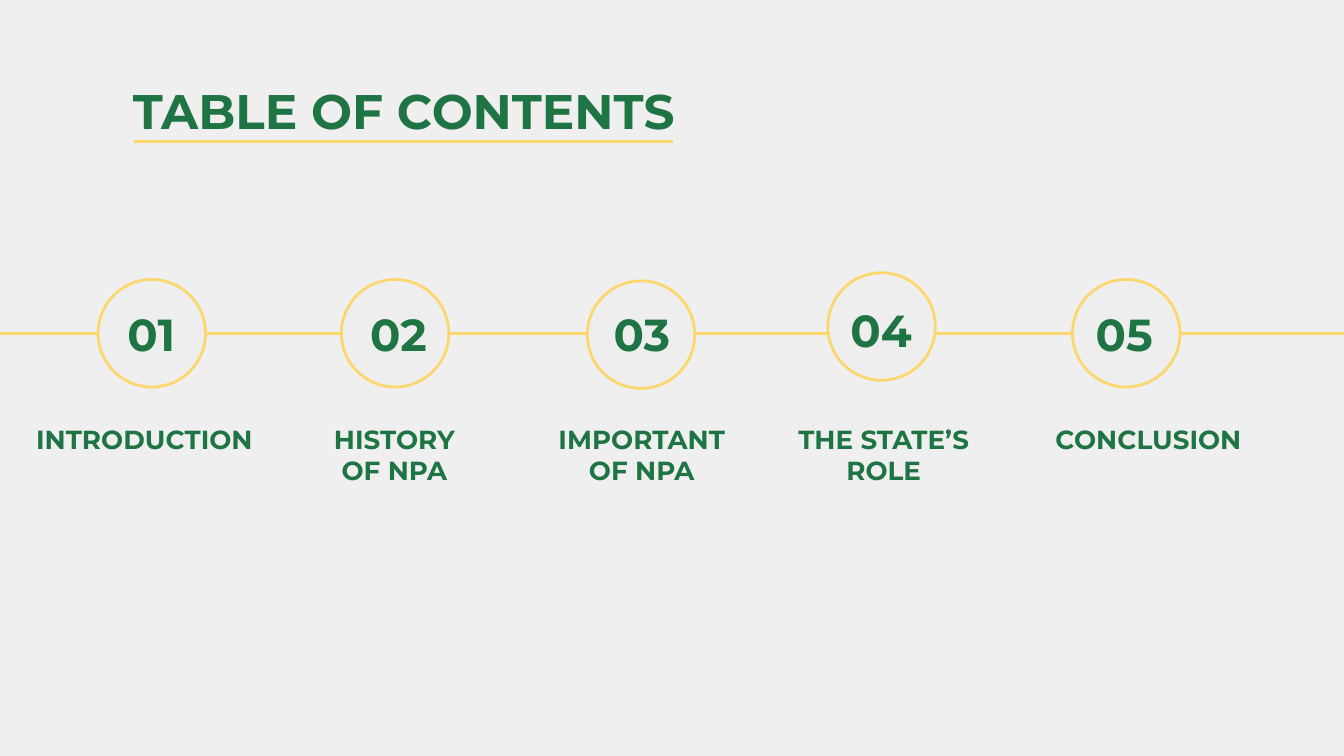
from lxml import etree
from pptx import Presentation
from pptx.dml.color import RGBColor
from pptx.enum.shapes import MSO_CONNECTOR, MSO_SHAPE
from pptx.enum.text import MSO_ANCHOR, PP_ALIGN
from pptx.oxml.ns import qn
from pptx.util import Inches, Pt

LEFT, CENTER = PP_ALIGN.LEFT, PP_ALIGN.CENTER
TOP, MIDDLE = MSO_ANCHOR.TOP, MSO_ANCHOR.MIDDLE
STRAIGHT, OVAL = MSO_CONNECTOR.STRAIGHT, MSO_SHAPE.OVAL

PAPER = RGBColor(0xEF, 0xEF, 0xEF)
DISC = RGBColor(0xEE, 0xEE, 0xEE)
GOLD = RGBColor(0xFB, 0xD7, 0x6D)
GREEN = RGBColor(0x1F, 0x74, 0x44)

WIDTH = Inches(10)
HEIGHT = WIDTH * 9 // 16
SIZE = 0.8
# circle left and top, number left and top, label left and width, label
STEPS = [
    (0.73, 2.08, 0.2, 2.21, 0.15, 1.85, "INTRODUCTION"),
    (2.54, 2.08, 2.04, 2.21, 2.01, 1.85, "HISTORY\vOF NPA"),
    (4.37, 2.09, 3.85, 2.21, 3.85, 1.85, "IMPORTANT\vOF NPA"),
    (6.16, 2.03, 5.63, 2.18, 5.55, 2.05, "THE STATE’S ROLE"),
    (7.98, 2.08, 7.44, 2.21, 7.52, 2.05, "CONCLUSION"),
]


def style(item, **values):
    for name, value in values.items():
        setattr(item, name, value)


def stroke(line):
    line.color.rgb = GOLD
    line.width = Pt(1.5)


def add_rule(slide, left, right, y):
    """Draw a level gold line."""
    rule = slide.shapes.add_connector(
        STRAIGHT, Inches(left), Inches(y), Inches(right), Inches(y))
    stroke(rule.line)
    etree.SubElement(rule._element.spPr, qn("a:effectLst"))


def add_disc(slide, left, top):
    disc = slide.shapes.add_shape(
        OVAL, Inches(left), Inches(top), Inches(SIZE), Inches(SIZE))
    disc.shadow.inherit = False
    disc.fill.solid()
    disc.fill.fore_color.rgb = DISC
    stroke(disc.line)


def add_text(slide, box, text, size, align=CENTER, anchor=TOP):
    frame = slide.shapes.add_textbox(*map(Inches, box)).text_frame
    pad = Inches(0.1)
    style(frame, word_wrap=True, vertical_anchor=anchor, margin_left=pad,
          margin_right=pad, margin_top=pad, margin_bottom=pad)
    para = frame.paragraphs[0]
    style(para, text=text, alignment=align)
    for run in para.runs:
        style(run.font, name="Montserrat", size=Pt(size), bold=True)
        run.font.color.rgb = GREEN


def add_step(slide, number, step):
    x, y, num_x, num_y, label_x, width, label = step
    add_disc(slide, x, y)
    add_text(slide, (num_x, num_y, 1.85, 0.55), f"{number:02}", 24,
             anchor=MIDDLE)
    add_text(slide, (label_x, 3.05, width, 0.63), label, 14)


def main():
    deck = Presentation()
    style(deck, slide_width=WIDTH, slide_height=HEIGHT)
    slide = deck.slides.add_slide(deck.slide_layouts[6])
    slide.background.fill.solid()
    slide.background.fill.fore_color.rgb = PAPER

    add_rule(slide, -0.02, 10.02, 2.48)
    add_text(slide, (0.89, 0.5, 8.21, 0.63), "TABLE OF CONTENTS", 26, LEFT)
    add_rule(slide, 1, 5.01, 1.05)
    for number, step in enumerate(STEPS, 1):
        add_step(slide, number, step)
    deck.save("out.pptx")


if __name__ == "__main__":
    main()
